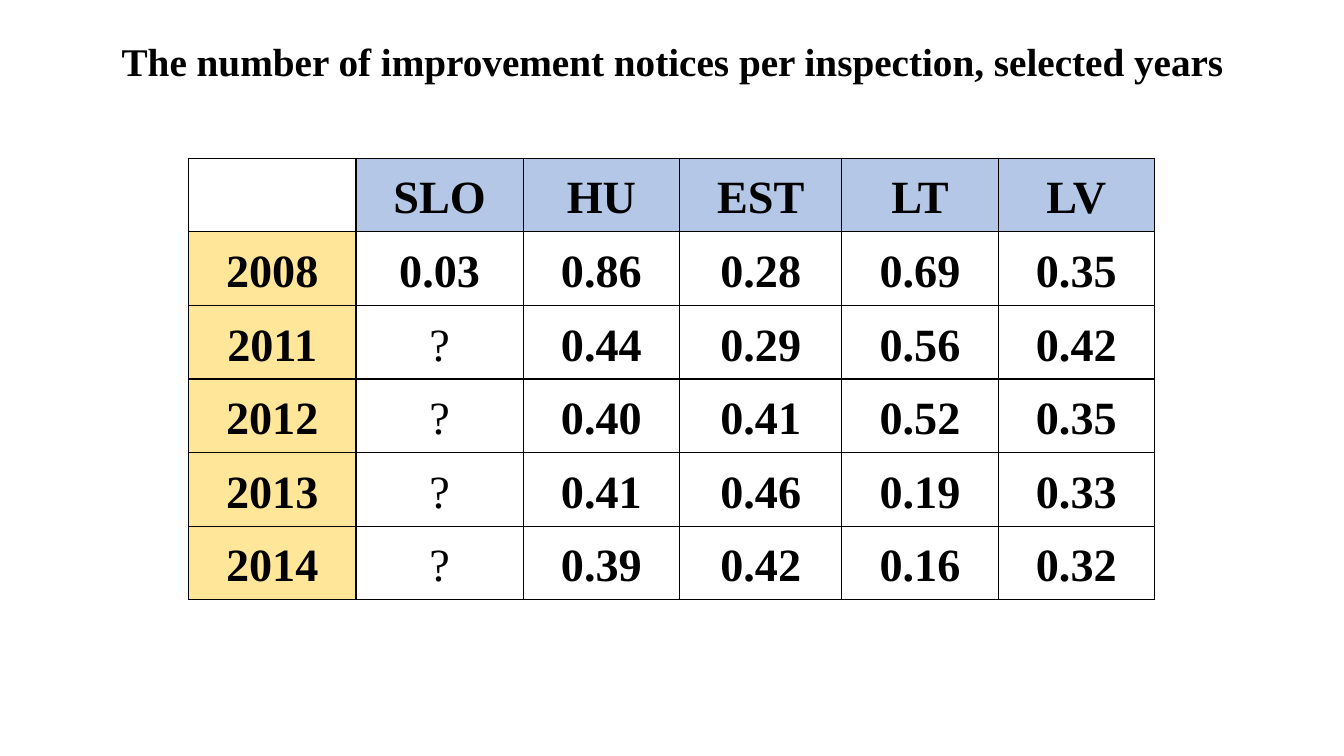
"""Build a slide with a table of improvement notices per inspection."""
from lxml.etree import SubElement as Sub
from pptx import Presentation
from pptx.dml.color import RGBColor as RGB
from pptx.enum.text import MSO_ANCHOR as Anchor, PP_ALIGN as Align
from pptx.oxml.ns import qn
from pptx.util import Inches, Pt

BLACK = RGB(0x00, 0x00, 0x00)
BLUE = RGB(0xB4, 0xC7, 0xE7)
YELLOW = RGB(0xFF, 0xE6, 0x99)
FONT = "Times New Roman"
TITLE = "The number of improvement notices per inspection, selected years"
ROWS = [
    ["", "SLO", "HU", "EST", "LT", "LV"],
    ["2008", "0.03", "0.86", "0.28", "0.69", "0.35"],
    ["2011", "?", "0.44", "0.29", "0.56", "0.42"],
    ["2012", "?", "0.40", "0.41", "0.52", "0.35"],
    ["2013", "?", "0.41", "0.46", "0.19", "0.33"],
    ["2014", "?", "0.39", "0.42", "0.16", "0.32"],
]
WIDTHS = [1.66, 1.66, 1.55, 1.61, 1.55, 1.55]
HEIGHT = 0.73


def write(frame, text, size, space, bold=True):
    frame.text = text
    para = frame.paragraphs[0]
    para.alignment = Align.CENTER
    para.line_spacing = space
    for run in para.runs:
        run.font.name = FONT
        run.font.size = Pt(size)
        run.font.bold = bold
        run.font.color.rgb = BLACK


def border(cell):
    props = cell._tc.get_or_add_tcPr()
    for side in ("a:lnL", "a:lnR", "a:lnT", "a:lnB"):
        line = Sub(props, qn(side), w=str(Pt(1)))
        fill = Sub(line, qn("a:solidFill"))
        Sub(fill, qn("a:srgbClr"), val=str(BLACK))


deck = Presentation()
deck.slide_width = Inches(13.33)
deck.slide_height = Inches(7.5)
slide = deck.slides.add_slide(deck.slide_layouts[6])

table = slide.shapes.add_table(
    len(ROWS), len(WIDTHS), Inches(1.87), Inches(1.57),
    Inches(sum(WIDTHS)), Inches(HEIGHT * len(ROWS))).table
table.horz_banding = False
for col, width in zip(table.columns, WIDTHS):
    col.width = Inches(width)
for r, row in enumerate(ROWS):
    table.rows[r].height = Inches(HEIGHT)
    for c, text in enumerate(row):
        cell = table.cell(r, c)
        cell.vertical_anchor = Anchor.MIDDLE
        cell.margin_left = cell.margin_right = Inches(0.21)
        cell.margin_top = Inches(0.03)
        cell.margin_bottom = 0
        border(cell)
        if (r == 0) == (c == 0):
            cell.fill.background()
        else:
            cell.fill.solid()
            cell.fill.fore_color.rgb = BLUE if r == 0 else YELLOW
        write(cell.text_frame, text, 33, 1.07, bold=text != "?")

title = slide.shapes.add_textbox(
    Inches(0.92), Inches(0.25), Inches(11.5), Inches(0.76)).text_frame
title.word_wrap = True
title.vertical_anchor = Anchor.MIDDLE
write(title, TITLE, 28, 0.9)

deck.save("out.pptx")
